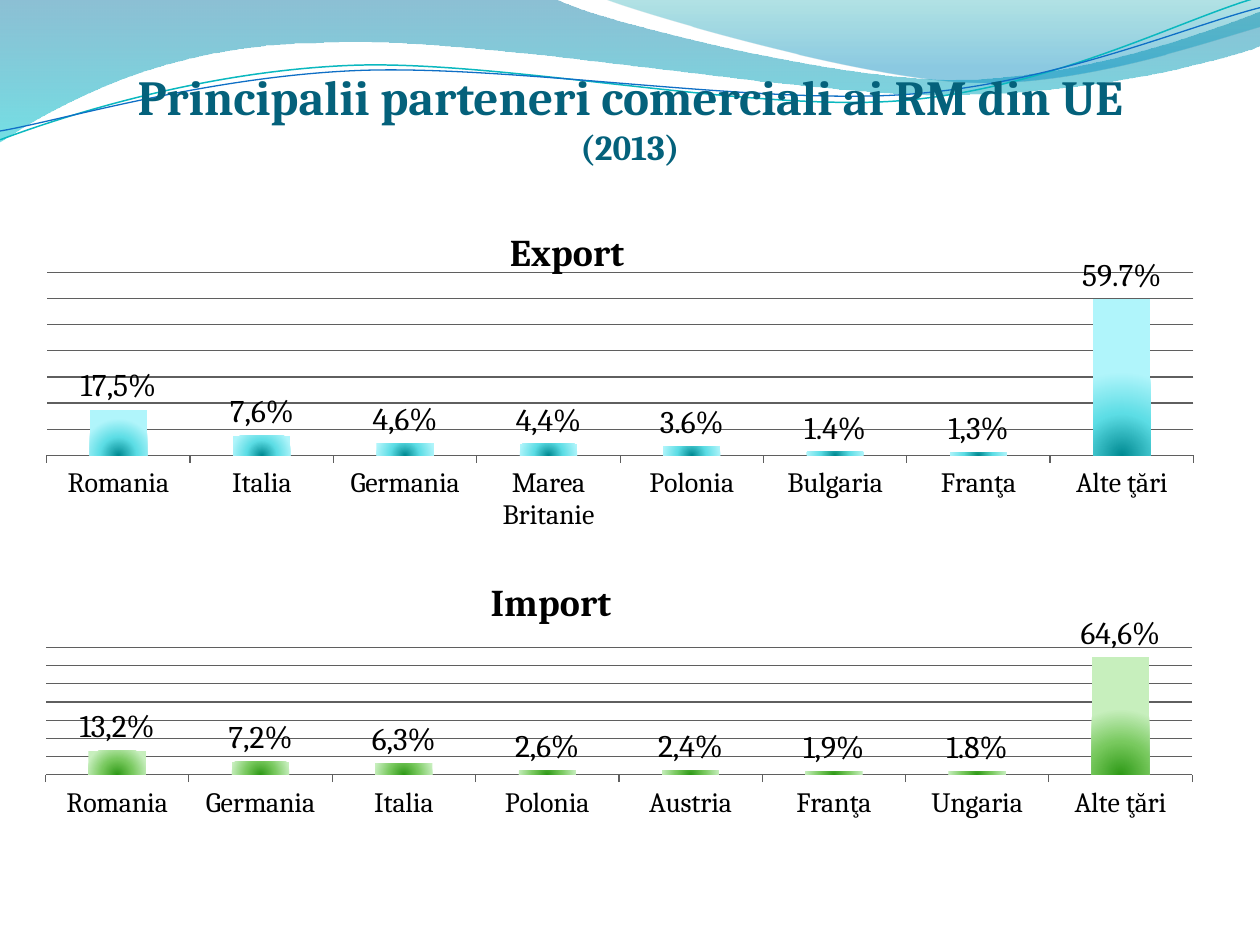
from dataclasses import dataclass
from math import cos, radians, sin

from lxml import etree
from pptx import Presentation
from pptx.chart.data import CategoryChartData
from pptx.dml.color import RGBColor
from pptx.enum.chart import XL_CHART_TYPE, XL_LABEL_POSITION, XL_TICK_MARK
from pptx.enum.text import MSO_ANCHOR, PP_ALIGN
from pptx.oxml.ns import qn
from pptx.util import Inches, Pt

COLUMN = XL_CHART_TYPE.COLUMN_CLUSTERED
OUTSIDE_END = XL_LABEL_POSITION.OUTSIDE_END
TICK_OUT, TICK_NONE = XL_TICK_MARK.OUTSIDE, XL_TICK_MARK.NONE
CENTER, BOTTOM = PP_ALIGN.CENTER, MSO_ANCHOR.BOTTOM
TITLE_ONLY = 5
COLS, ROWS = 100, 75
UNITS = 1000  # path units in a tenth of the slide's width
TILT, PIVOT = -2.7, (4.99, 0.58)


@dataclass(frozen=True)
class Theme:
    font: str = "Cambria"
    title: str = "04617B"
    text: str = "000000"
    axis: str = "5F5F5F"
    teal_line: str = "0AB8BF"
    blue_line: str = "0F6FC6"
    # gradient stops: position, colour, opacity (all shares in percent)
    left_wave: tuple = ((0, "0074A1", 45), (100, "00C6CF", 55))
    right_wave: tuple = ((0, "00A1A9", 30), (80, "008BBF", 45))
    export_bar: tuple = ((0, "008A92", 100), (50, "5CDDE5", 100), (100, "B0F5FB", 100))
    import_bar: tuple = ((0, "2F9A17", 100), (50, "78C95E", 100), (100, "C7EFBD", 100))
    title_size: float = 28
    year_size: float = 20
    chart_title_size: float = 21.6
    label_size: float = 18
    category_size: float = 16


THEME = Theme()

# Curves run on a scale where the slide is 10 wide; six numbers make a Bezier, two a line.
LEFT_WAVE = [(0, -0.01), (4.4, -0.01), (4.76, 0.17, 6.64, 0.63, 7.58, 0.63),
             (8.53, 0.63, 9.58, 0.26, 10, 0.09), (10.01, 0.36),
             (9.83, 0.44, 8.7, 0.76, 7.46, 0.75), (6.22, 0.75, 3.82, 0.28, 2.57, 0.34),
             (1.29, 0.35, 0.46, 0.83, -0.01, 1.13)]
RIGHT_WAVE = [(4.79, -0.01), (5.09, 0.11, 6.82, 0.62, 7.69, 0.65),
              (8.56, 0.69, 9.61, 0.32, 10, 0.21), (10, 0)]
TEAL_CURVE = [(0, 1.11), (0.48, 0.93, 1.58, 0.57, 2.77, 0.52),
              (3.95, 0.47, 5.93, 0.89, 7.13, 0.8), (8.33, 0.71, 9.38, 0.15, 9.98, -0.02)]
BLUE_CURVE = [(0, 1.04), (0.47, 0.96, 1.64, 0.61, 2.83, 0.56),
              (4.03, 0.51, 5.97, 0.83, 7.17, 0.75), (8.36, 0.67, 9.41, 0.21, 10, 0.06)]

EXPORT = [("Romania", 0.175, "17,5%"), ("Italia", 0.076, "7,6%"),
          ("Germania", 0.046, "4,6%"), ("Marea Britanie", 0.044, "4,4%"),
          ("Polonia", 0.036, None), ("Bulgaria", 0.014, None),
          ("Franţa", 0.013, "1,3%"), ("Alte ţări", 0.597, None)]
IMPORT = [("Romania", 0.132, "13,2%"), ("Germania", 0.072, "7,2%"),
          ("Italia", 0.063, "6,3%"), ("Polonia", 0.026, "2,6%"),
          ("Austria", 0.024, "2,4%"), ("Franţa", 0.018, "1,9%"),
          ("Ungaria", 0.018, None), ("Alte ţări", 0.646, "64,6%")]


def grid_box(prs, col, row, cols, rows):
    x, y = prs.slide_width / COLS, prs.slide_height / ROWS
    return int(col * x), int(row * y), int(cols * x), int(rows * y)


def format_font(font, size, color=THEME.text, bold=False):
    font.name, font.size, font.bold = THEME.font, Pt(size), bold
    font.color.rgb = RGBColor.from_string(color)


def add_text(p, text, **fmt):
    r = p.add_run()
    r.text = text
    format_font(r.font, **fmt)


def set_gradient(fill, sp_pr, stops, radial=False):
    """Fill top to bottom, or outwards from the middle of the bottom edge."""
    fill.gradient()
    grad = sp_pr.find(qn("a:gradFill"))
    for child in list(grad):
        grad.remove(child)
    gs_list = etree.SubElement(grad, qn("a:gsLst"))
    for pos, color, opacity in stops:
        gs = etree.SubElement(gs_list, qn("a:gs"), pos=str(pos * 1000))
        clr = etree.SubElement(gs, qn("a:srgbClr"), val=color)
        etree.SubElement(clr, qn("a:alpha"), val=str(opacity * 1000))
    if radial:
        path = etree.SubElement(grad, qn("a:path"), path="circle")
        etree.SubElement(path, qn("a:fillToRect"), l="50000", t="100000", r="50000", b="0")
    else:
        etree.SubElement(grad, qn("a:lin"), ang="5400000", scaled="0")


def path_point(x, y, tilt):
    """Turn a point back by the shape's tilt and round it to path units."""
    a = radians(-tilt)
    dx, dy = x - PIVOT[0], y - PIVOT[1]
    return (round((PIVOT[0] + dx * cos(a) - dy * sin(a)) * UNITS),
            round((PIVOT[1] + dx * sin(a) + dy * cos(a)) * UNITS))


def add_curve(slide, box, segments, closed, tilt=0):
    left, top, width, _ = box
    points = [[path_point(*seg[i:i + 2], tilt) for i in range(0, len(seg), 2)]
              for seg in segments]
    anchors = [group[-1] for group in points]
    builder = slide.shapes.build_freeform(*anchors[0], scale=width / (10 * UNITS))
    builder.add_line_segments(anchors[1:], close=closed)
    sp = builder.convert_to_shape(left, top)
    min_x, min_y = (min(values) for values in zip(*anchors))
    lines = list(sp._element.spPr.iter(qn("a:lnTo")))
    for line, group in zip(lines, points[1:]):
        if len(group) == 3:
            bezier = etree.Element(qn("a:cubicBezTo"))
            for x, y in group:
                etree.SubElement(bezier, qn("a:pt"), x=str(x - min_x), y=str(y - min_y))
            line.getparent().replace(line, bezier)
    sp.rotation = tilt
    sp.shadow.inherit = False
    return sp


def add_waves(slide, box):
    for segments, stops in ((LEFT_WAVE, THEME.left_wave), (RIGHT_WAVE, THEME.right_wave)):
        sp = add_curve(slide, box, segments, closed=True)
        set_gradient(sp.fill, sp._element.spPr, stops)
        sp.line.fill.background()
    for segments, color, weight in ((TEAL_CURVE, THEME.teal_line, 0.85),
                                    (BLUE_CURVE, THEME.blue_line, 0.75)):
        sp = add_curve(slide, box, segments, closed=False, tilt=TILT)
        sp.fill.background()
        sp.line.color.rgb = RGBColor.from_string(color)
        sp.line.width = Pt(weight)


def add_title(slide, box, heading, year):
    sp = slide.shapes.title
    sp.left, sp.top, sp.width, sp.height = box
    slide.shapes._spTree.append(sp._element)  # in front of the waves
    tf = sp.text_frame
    tf.word_wrap, tf.vertical_anchor = True, BOTTOM
    tf.margin_left = tf.margin_right = tf.margin_bottom = 0
    tf.margin_top = Inches(0.05)
    p = tf.paragraphs[0]
    p.alignment = CENTER
    add_text(p, heading, size=THEME.title_size, color=THEME.title, bold=True)
    p.add_line_break()
    add_text(p, year, size=THEME.year_size, color=THEME.title, bold=True)


def set_layout(parent, index, **percents):
    """Place a chart part by percents of the chart's size."""
    for old in parent.findall(qn("c:layout")):
        parent.remove(old)
    layout = etree.Element(qn("c:layout"))
    manual = etree.SubElement(layout, qn("c:manualLayout"))
    if "w" in percents:
        etree.SubElement(manual, qn("c:layoutTarget"), val="inner")
    for key in ("x", "y"):
        etree.SubElement(manual, qn(f"c:{key}Mode"), val="edge")
    for key, value in percents.items():
        etree.SubElement(manual, qn(f"c:{key}"), val=f"{value / 100:.3f}")
    parent.insert(index, layout)


def add_partner_chart(slide, box, title, partners, stops, title_at, plot_at):
    data = CategoryChartData(number_format="0.0%")
    data.categories = [name for name, _, _ in partners]
    data.add_series("Series 1", [value for _, value, _ in partners])
    chart = slide.shapes.add_chart(COLUMN, *box, data).chart
    format_font(chart.font, THEME.label_size)
    chart.has_legend, chart.has_title = False, True
    add_text(chart.chart_title.text_frame.paragraphs[0], title,
             size=THEME.chart_title_size, bold=True)
    set_layout(chart.chart_title._element, 1, **title_at)

    plot = chart.plots[0]
    plot.gap_width, plot.vary_by_categories = 150, False
    set_layout(plot._element.getparent(), 0, **plot_at)
    axis_color = RGBColor.from_string(THEME.axis)
    cat, val = chart.category_axis, chart.value_axis
    cat.major_tick_mark, cat.minor_tick_mark = TICK_OUT, TICK_NONE
    cat.format.line.color.rgb = axis_color
    format_font(cat.tick_labels.font, THEME.category_size)
    val.visible, val.has_major_gridlines = False, True
    val.minimum_scale, val.maximum_scale, val.major_unit = 0, 0.7, 0.1
    val.major_gridlines.format.line.color.rgb = axis_color

    series = plot.series[0]
    fill = series.format.fill
    set_gradient(fill, series._element.find(qn("c:spPr")), stops, radial=True)
    labels = series.data_labels
    labels.show_value, labels.position = True, OUTSIDE_END
    labels.number_format, labels.number_format_is_linked = "0.0%", False
    format_font(labels.font, THEME.label_size)
    for i, (_, _, text) in enumerate(partners):
        if text:
            label = series.points[i].data_label
            add_text(label.text_frame.paragraphs[0], text, size=THEME.label_size)
            label.position = OUTSIDE_END


def main():
    prs = Presentation()
    prs.slide_width, prs.slide_height = Inches(10), Inches(7.5)
    slide = prs.slides.add_slide(prs.slide_layouts[TITLE_ONLY])
    add_waves(slide, grid_box(prs, 0, 0, COLS, ROWS))
    add_title(slide, grid_box(prs, 0, 1.3, COLS, 12),
              "Principalii parteneri comerciali ai RM din UE", "(2013)")
    add_partner_chart(slide, grid_box(prs, 2, 17, 95.3, 26.8), "Export", EXPORT,
                      THEME.export_bar, dict(x=39.8, y=2),
                      dict(x=1.8, y=17.2, w=95.5, h=54.3))
    add_partner_chart(slide, grid_box(prs, 2, 44.6, 95.3, 26), "Import", IMPORT,
                      THEME.import_bar, dict(x=38.2, y=2.7),
                      dict(x=1.7, y=26.1, w=95.5, h=38.9))
    prs.save("out.pptx")


if __name__ == "__main__":
    main()
